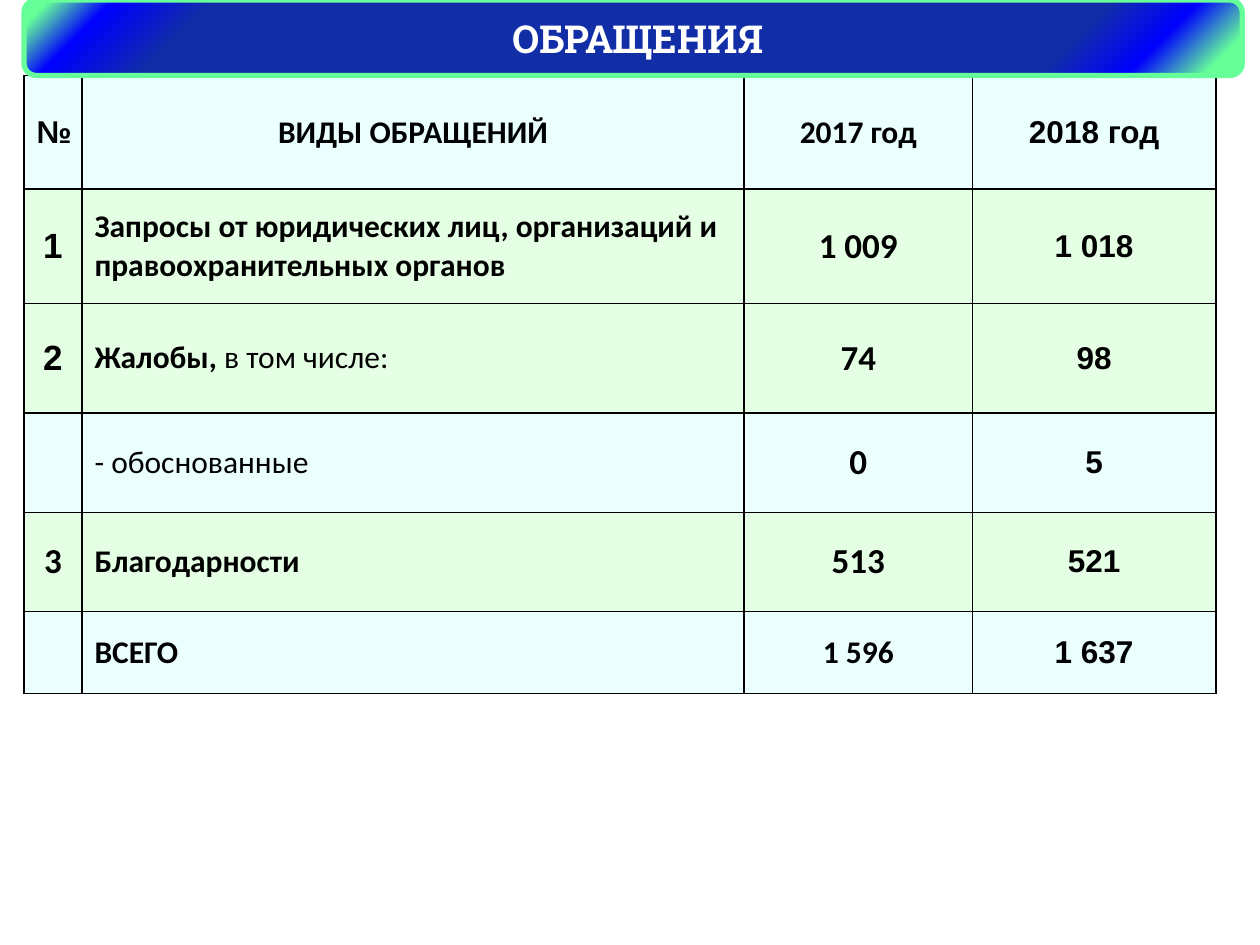
import collections
import dataclasses

import lxml.etree
import pptx
import pptx.dml.color
import pptx.enum.shapes
import pptx.enum.text
import pptx.oxml.ns
import pptx.util

Box = collections.namedtuple("Box", "left top width height")
Words = collections.namedtuple("Words", "text font size bold", defaults=(True,))
ALIGN = pptx.enum.text.PP_ALIGN
MIDDLE = pptx.enum.text.MSO_ANCHOR.MIDDLE


@dataclasses.dataclass(frozen=True)
class Theme:
    ink: str = "000000"
    title_ink: str = "FFFFFF"
    frame: str = "66FF99"
    plain_row: str = "EBFFFF"
    tinted_row: str = "E5FFE5"
    banner_stops: tuple = ((3, "66FF99"), (9, "0000FF"), (16, "122EA6"),
                           (85, "122EA6"), (93, "0000FF"), (98, "66FF99"))
    body: str = "Calibri"
    figures: str = "Arial"
    heading: str = "Roboto Slab"
    normal: int = 18
    large: int = 20
    title: int = 22


THEME = Theme()
COLUMNS = (0.46, 5.25, 1.81, 1.93)
ROWS = (0.9, 0.91, 0.87, 0.79, 0.79, 0.65)


def label(text, bold=True):
    return Words(text, THEME.body, THEME.normal, bold)


def figure(text):
    return Words(text, THEME.figures, THEME.normal)


def large(text, font=THEME.body):
    return Words(text, font, THEME.large)


APPEALS = (
    (THEME.plain_row, [figure("№")], [label("ВИДЫ ОБРАЩЕНИЙ")],
     [label("2017 год")], [figure("2018 год")]),
    (THEME.tinted_row, [large("1", THEME.figures)],
     [label("Запросы от юридических лиц, организаций и правоохранительных органов")],
     [large("1 009")], [figure("1 018")]),
    (THEME.tinted_row, [large("2", THEME.figures)],
     [label("Жалобы, "), label("в том числе:", False)],
     [large("74")], [figure("98")]),
    (THEME.plain_row, [], [label("- обоснованные", False)],
     [large("0")], [figure("5")]),
    (THEME.tinted_row, [large("3")], [label("Благодарности")],
     [large("513")], [figure("521")]),
    (THEME.plain_row, [], [label("ВСЕГО")], [label("1 596")], [figure("1 637")]),
)


def rgb(value):
    return pptx.dml.color.RGBColor.from_string(value)


def add_node(parent, tag, **attributes):
    node = lxml.etree.SubElement(parent, pptx.oxml.ns.qn(tag))
    for name, value in attributes.items():
        node.set(name, str(value))
    return node


def write(para, spans, color, align):
    para.alignment = align
    for words in spans:
        span = para.add_run()
        span.text = words.text
        span.font.name = words.font
        span.font.size = pptx.util.Pt(words.size)
        span.font.bold = words.bold
        span.font.color.rgb = rgb(color)


def border_cell(cell):
    properties = cell._tc.get_or_add_tcPr()
    for position, side in enumerate(("a:lnL", "a:lnR", "a:lnT", "a:lnB")):
        line = add_node(properties, side, w=pptx.util.Pt(1))
        add_node(add_node(line, "a:solidFill"), "a:srgbClr", val=THEME.ink)
        properties.insert(position, line)


def add_appeals_table(page, box):
    table = page.shapes.add_table(len(ROWS), len(COLUMNS), *box).table
    for column, share in zip(table.columns, COLUMNS):
        column.width = int(box.width * share / sum(COLUMNS))
    for row, share in zip(table.rows, ROWS):
        row.height = int(box.height * share / sum(ROWS))
    for row_index, (fill, *entries) in enumerate(APPEALS):
        for column_index, spans in enumerate(entries):
            cell = table.cell(row_index, column_index)
            cell.vertical_anchor = MIDDLE
            cell.fill.solid()
            cell.fill.fore_color.rgb = rgb(fill)
            border_cell(cell)
            is_label = column_index == 1 and row_index > 0
            para = cell.text_frame.paragraphs[0]
            write(para, spans, THEME.ink, ALIGN.LEFT if is_label else ALIGN.CENTER)
            spaced = column_index == 0 or (row_index < 2 and column_index < 3)
            if spans and spaced:
                para.space_before = pptx.util.Pt(spans[0].size * 0.2)


def fill_banner(banner):
    banner.fill.gradient()
    gradient = banner._element.spPr.find(pptx.oxml.ns.qn("a:gradFill"))
    for child in list(gradient):
        gradient.remove(child)
    stops = add_node(gradient, "a:gsLst")
    for percent, color in THEME.banner_stops:
        stop = add_node(stops, "a:gs", pos=percent * 1000)
        add_node(stop, "a:srgbClr", val=color)
    circle = add_node(gradient, "a:path", path="circle")
    add_node(circle, "a:fillToRect", l=100000, t=100000)
    add_node(gradient, "a:tileRect", r=-100000, b=-100000)


def add_title_banner(page, box):
    rounded = pptx.enum.shapes.MSO_SHAPE.ROUNDED_RECTANGLE
    banner = page.shapes.add_shape(rounded, *box)
    banner.shadow.inherit = False
    fill_banner(banner)
    banner.line.color.rgb = rgb(THEME.frame)
    banner.line.width = pptx.util.Pt(3)
    frame = banner.text_frame
    frame.word_wrap = True
    frame.vertical_anchor = MIDDLE
    title = Words(" ОБРАЩЕНИЯ", THEME.heading, THEME.title)
    write(frame.paragraphs[0], [title], THEME.title_ink, ALIGN.CENTER)


def main():
    deck = pptx.Presentation()
    deck.slide_width = pptx.util.Inches(10)
    deck.slide_height = pptx.util.Inches(7.5)
    page = deck.slides.add_slide(deck.slide_layouts[6])
    left = int(deck.slide_width * 0.019)
    banner_height = int(deck.slide_height * 0.08)
    add_appeals_table(page, Box(left, banner_height, int(deck.slide_width * 0.946),
                                int(deck.slide_height * 0.654)))
    add_title_banner(page, Box(left, 0, int(deck.slide_width * 0.967), banner_height))
    deck.save("out.pptx")


if __name__ == "__main__":
    main()
